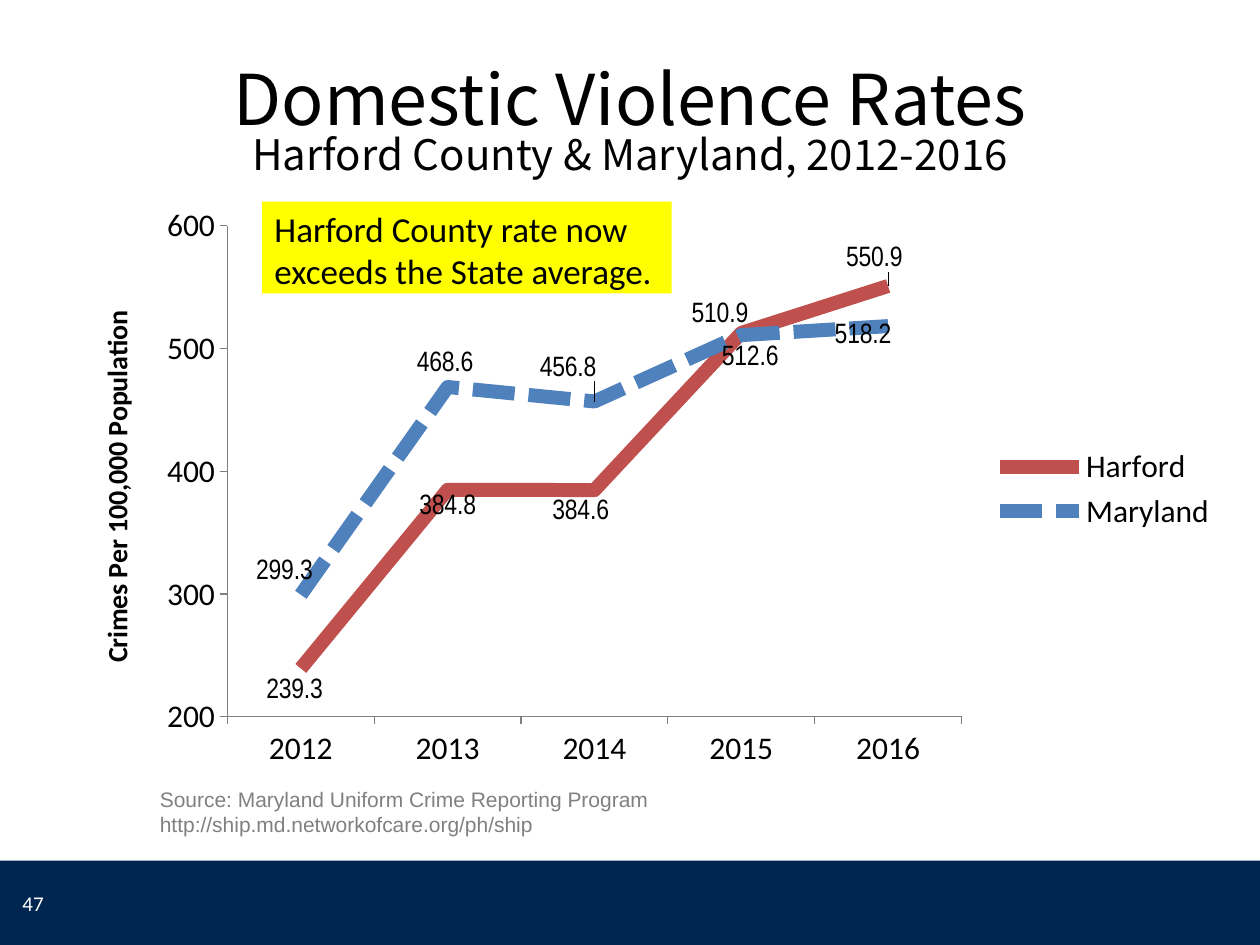
from lxml import etree
from pptx import Presentation
from pptx.chart.data import CategoryChartData
from pptx.dml.color import RGBColor
from pptx.enum.chart import (XL_CHART_TYPE, XL_LABEL_POSITION, XL_LEGEND_POSITION,
                             XL_MARKER_STYLE, XL_TICK_MARK)
from pptx.enum.dml import MSO_LINE
from pptx.enum.shapes import MSO_SHAPE
from pptx.enum.text import MSO_ANCHOR, MSO_AUTO_SIZE, PP_ALIGN
from pptx.oxml.ns import qn
from pptx.util import Inches, Pt

LINE, RIGHT = XL_CHART_TYPE.LINE, XL_LEGEND_POSITION.RIGHT
UP, DOWN = XL_LABEL_POSITION.ABOVE, XL_LABEL_POSITION.BELOW
NONE, OUT = XL_MARKER_STYLE.NONE, XL_TICK_MARK.OUTSIDE
SOLID, DASH = MSO_LINE.SOLID, MSO_LINE.SQUARE_DOT
RECT, FIXED = MSO_SHAPE.RECTANGLE, MSO_AUTO_SIZE.NONE
TOP, MIDDLE = MSO_ANCHOR.TOP, MSO_ANCHOR.MIDDLE
LEFT, CENTER = PP_ALIGN.LEFT, PP_ALIGN.CENTER

# Content
TITLE = [("Domestic Violence Rates", "title"),
         ("Harford County & Maryland, 2012-2016", "sub")]
NOTE = [("Harford County rate now exceeds the State average.", "note")]
SOURCE = [("Source: Maryland Uniform Crime Reporting Program", "source"),
          ("http://ship.md.networkofcare.org/ph/ship", "source")]
PAGE = [("47", "page")]
AXIS = "Crimes Per 100,000 Population"
YEARS = ["2012", "2013", "2014", "2015", "2016"]
# Each point: value, label side, label shift right and down in inches
SERIES = [
    ("Harford", "red", SOLID, [
        (239.3, DOWN, -0.05, 0.04), (384.8, DOWN, 0, 0), (384.6, DOWN, -0.11, 0.04),
        (512.6, DOWN, 0.07, 0.06), (550.9, UP, -0.11, -0.07)]),
    ("Maryland", "blue", DASH, [
        (299.3, UP, -0.13, -0.04), (468.6, UP, -0.02, -0.04), (456.8, UP, -0.21, -0.12),
        (510.9, UP, -0.17, -0.02), (518.2, DOWN, -0.2, -0.06)]),
]

# Theme: colours, and type styles as font, size, colour
THEME = {
    "color": {"black": "000000", "white": "FFFFFF", "grey": "808080", "navy": "002650",
              "yellow": "FFFF00", "red": "C0504D", "blue": "4F81BD"},
    "type": {"title": ("Noto Sans CJK SC", 40, "black"),
             "sub": ("Noto Sans CJK SC", 24, "black"),
             "note": ("Calibri", 20, "black"),
             "source": ("Arial", 12, "grey"),
             "page": ("Calibri", 12, "white"),
             "chart": ("Calibri", 18, "black"),
             "axis": ("Calibri", 16, "black"),
             "label": ("Arial Narrow", 16, "black")},
}

WIDE, HIGH = 9.25, 4.64  # chart size


def color(name):
    return RGBColor.from_string(THEME["color"][name])


def style(font, kind):
    font.name, size, ink = THEME["type"][kind]
    font.size = Pt(size)
    font.color.rgb = color(ink)


def write(frame, rows, anchor=TOP, align=LEFT, space=None):
    frame.word_wrap = True
    frame.auto_size = FIXED
    frame.vertical_anchor = anchor
    for i, (text, kind) in enumerate(rows):
        para = frame.paragraphs[0] if i == 0 else frame.add_paragraph()
        para.alignment = align
        para.space_before = Pt(0)
        if space:
            para.line_spacing = space
        run = para.add_run()
        run.text = text
        style(run.font, kind)


def add_box(slide, area, fill):
    box = slide.shapes.add_shape(RECT, *map(Inches, area))
    box.shadow.inherit = False
    box.fill.solid()
    box.fill.fore_color.rgb = color(fill)
    box.line.fill.background()
    return box


def add_text(slide, area, rows, anchor=TOP):
    box = slide.shapes.add_textbox(*map(Inches, area))
    write(box.text_frame, rows, anchor)


def make_layout(**parts):
    layout = etree.Element(qn("c:layout"))
    manual = etree.SubElement(layout, qn("c:manualLayout"))
    for tag, val in parts.items():
        etree.SubElement(manual, qn("c:" + tag)).set("val", str(val))
    return layout


def format_axis(axis):
    axis.has_major_gridlines = False
    axis.major_tick_mark = OUT
    axis.format.line.color.rgb = color("grey")
    axis.format.line.width = Pt(0.75)
    style(axis.tick_labels.font, "chart")


def format_line(line, ink, dash, points):
    line.smooth = False
    line.marker.style = NONE
    line.format.line.color.rgb = color(ink)
    line.format.line.width = Pt(8)
    line.format.line.dash_style = dash
    labels = line.data_labels
    labels.show_value = True
    style(labels.font, "label")
    for i, (_, side, right, down) in enumerate(points):
        label = line.points[i].data_label
        style(label.font, "label")
        label.position = side
    # Shift each label as a share of the chart size
    for item, (_, _, right, down) in zip(
            labels._element.findall(qn("c:dLbl")), points):
        item.find(qn("c:idx")).addnext(
            make_layout(x=round(right / WIDE, 4), y=round(down / HIGH, 4)))


def add_rates(slide):
    data = CategoryChartData(number_format="0.0")
    data.categories = YEARS
    for name, _, _, points in SERIES:
        data.add_series(name, [point[0] for point in points])
    chart = slide.shapes.add_chart(
        LINE, *map(Inches, (0.51, 1.56, WIDE, HIGH)), data).chart
    style(chart.font, "chart")
    chart.has_title = False
    chart.has_legend = True
    chart.legend.position = RIGHT
    chart.legend.include_in_layout = False
    style(chart.legend.font, "chart")

    # Axes
    rate = chart.value_axis
    for axis in (chart.category_axis, rate):
        format_axis(axis)
    rate.minimum_scale, rate.maximum_scale, rate.major_unit = 200, 600, 100
    rate.tick_labels.number_format = "0"
    rate.tick_labels.number_format_is_linked = False
    run = rate.axis_title.text_frame.paragraphs[0].add_run()
    run.text = AXIS
    style(run.font, "axis")
    run.font.bold = True

    # Lines and plot area
    plot = chart.plots[0]
    plot.vary_by_categories = False
    for line, (_, ink, dash, points) in zip(plot.series, SERIES):
        format_line(line, ink, dash, points)
    area = chart._chartSpace.chart.plotArea
    for old in area.findall(qn("c:layout")):
        area.remove(old)
    area.insert(0, make_layout(layoutTarget="inner", xMode="edge", yMode="edge",
                               x=0.14, y=0.05, w=0.63, h=0.84))


def main():
    deck = Presentation()
    deck.slide_width, deck.slide_height = Inches(10), Inches(7.5)
    slide = deck.slides.add_slide(deck.slide_layouts[5])

    # Footer band and page number
    add_box(slide, (0, 6.83, 10, 0.67), "navy")
    add_text(slide, (0.08, 6.97, 2.33, 0.4), PAGE, MIDDLE)

    # Title, set low in its box
    title = slide.shapes.title
    title.left, title.top, title.width, title.height = map(Inches, (0.5, 0, 9, 1.33))
    title.text_frame.margin_top = Inches(0.66)
    title.text_frame.margin_bottom = 0
    write(title.text_frame, TITLE, MIDDLE, CENTER, 0.8)

    # Chart, source and highlighted note
    add_rates(slide)
    add_text(slide, (1.17, 6.19, 4.58, 0.5), SOURCE)
    note = add_box(slide, (2.08, 1.6, 3.25, 0.73), "yellow")
    write(note.text_frame, NOTE)
    deck.save("out.pptx")


if __name__ == "__main__":
    main()
